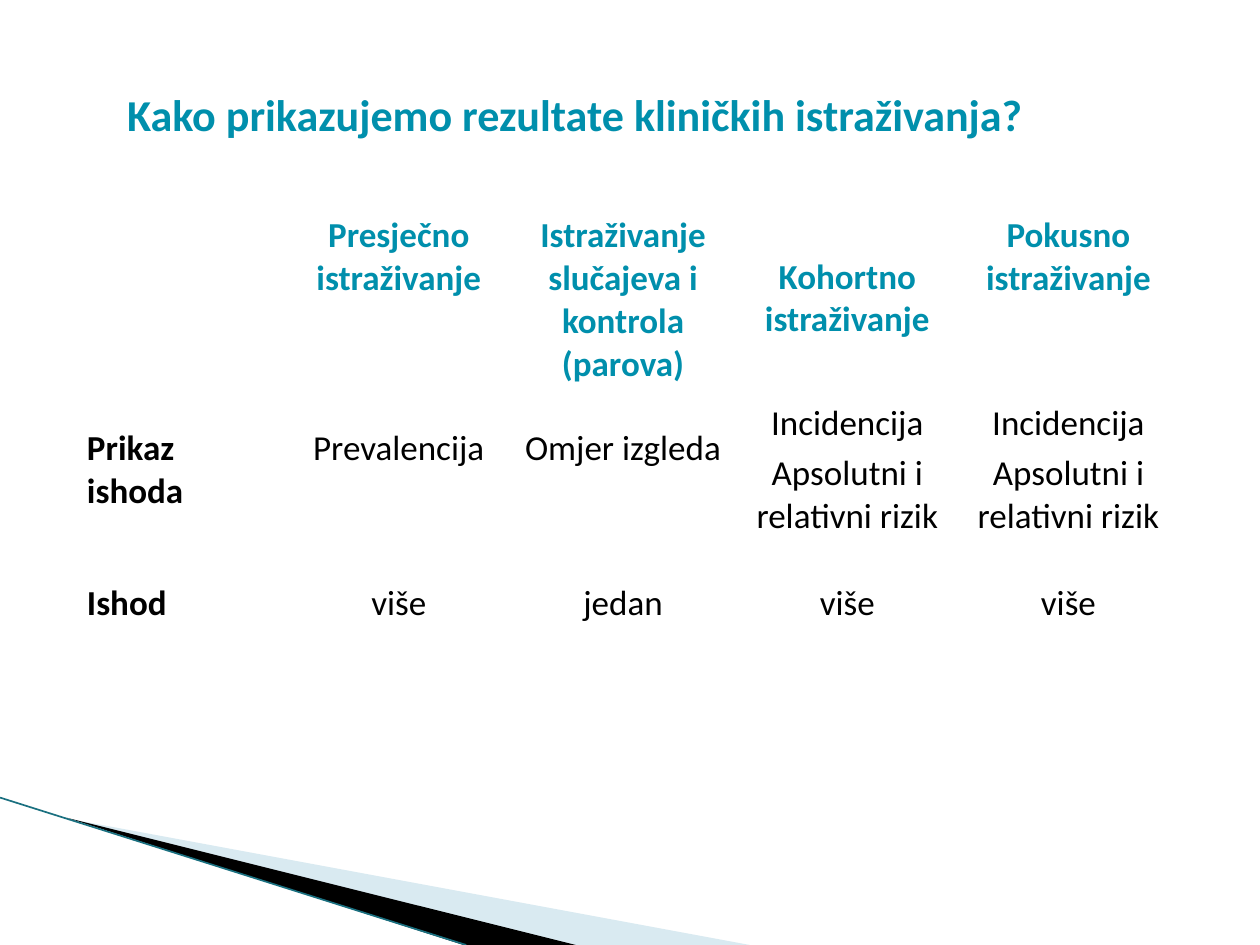
from lxml import etree
from pptx import Presentation, util as u
from pptx.dml.color import RGBColor
from pptx.enum import text
from pptx.oxml.ns import qn

theme = dict(font="Calibri", teal="008FAC", black="000000", pale="A0CBDC",
             edge="1A7080", head=25.2, body=20)

deck = Presentation()
deck.slide_width, deck.slide_height = u.Inches(10), u.Inches(7.5)
W, H = deck.slide_width, deck.slide_height
slide = deck.slides.add_slide(deck.slide_layouts[6])
tree = slide.shapes


def write(para, words, size, color, bold):
    run = para.add_run()
    run.text = words
    font = run.font
    font.name, font.size, font.bold = theme["font"], u.Pt(size), bold
    font.color.rgb = RGBColor.from_string(color)


# Corner wedges, in thousandths of the slide width
wedges = [
    ([(55, 650), (595, 750), (456, 750)], "pale", 40),
    ([(53, 649), (457, 750), (368, 750)], "black", 100),
]
for points, color, alpha in wedges:
    pen = tree.build_freeform(*points[0], scale=W / 1000)
    pen.add_line_segments(points[1:], close=True)
    wedge = pen.convert_to_shape()
    wedge.shadow.inherit = False
    wedge.line.fill.background()
    wedge.fill.solid()
    wedge.fill.fore_color.rgb = RGBColor.from_string(theme[color])
    if alpha < 100:
        tint = wedge._element.spPr.find(".//" + qn("a:srgbClr"))
        etree.SubElement(tint, qn("a:alpha")).set("val", str(alpha * 1000))

# Thin edge along the wedges
edge = tree.add_connector(1, 0, int(H * 0.844), int(W * 0.37), H)
edge.line.width = u.Pt(0.95)
edge.line.color.rgb = RGBColor.from_string(theme["edge"])
etree.SubElement(edge._element.spPr, qn("a:effectLst"))

# Title
box = tree.add_textbox(int(W * 0.091), int(H * 0.059), int(W * 0.811), int(H * 0.124))
frame = box.text_frame
frame.word_wrap = True
frame.vertical_anchor = text.MSO_ANCHOR.MIDDLE
write(frame.paragraphs[0], "Kako prikazujemo rezultate kliničkih istraživanja?",
      theme["head"], theme["teal"], True)

# Table of study types; each cell is a list of paragraphs
risk = ["Incidencija", "Apsolutni i relativni rizik"]
rows = [
    [[], ["Presječno istraživanje"], ["Istraživanje slučajeva i kontrola (parova)"],
     ["Kohortno istraživanje"], ["Pokusno istraživanje"]],
    [["Prikaz ishoda"], ["Prevalencija"], ["Omjer izgleda"], risk, risk],
    [["Ishod"], ["više"], ["jedan"], ["više"], ["više"]],
]
wide = [0.17, 0.175, 0.181, 0.175, 0.176]
tall = [0.147, 0.179, 0.104]
top = [(0, 1), (0, 4)]
lifted = [(1, 1), (1, 2)]

grid = tree.add_table(len(rows), len(wide), int(W * 0.059), int(H * 0.227),
                      int(W * sum(wide)), int(H * sum(tall))).table
grid.first_row = grid.horz_banding = False
for col, share in zip(grid.columns, wide):
    col.width = int(W * share)
for row, share in zip(grid.rows, tall):
    row.height = int(H * share)

for r, row in enumerate(rows):
    for c, lines in enumerate(row):
        cell = grid.cell(r, c)
        cell.fill.background()
        cell.margin_top = 0
        # A lifted cell sits half a line above the middle
        cell.margin_bottom = u.Inches(0.39 if (r, c) in lifted else 0.05)
        cell.vertical_anchor = (text.MSO_ANCHOR.TOP if (r, c) in top
                                else text.MSO_ANCHOR.MIDDLE)
        for n, words in enumerate(lines):
            para = cell.text_frame.paragraphs[0] if n == 0 else cell.text_frame.add_paragraph()
            if n:
                para.space_before = u.Pt(theme["body"] * 0.2)
            para.alignment = text.PP_ALIGN.CENTER if c else text.PP_ALIGN.LEFT
            write(para, words, theme["body"], theme["black" if r else "teal"],
                  r == 0 or c == 0)

deck.save("out.pptx")
